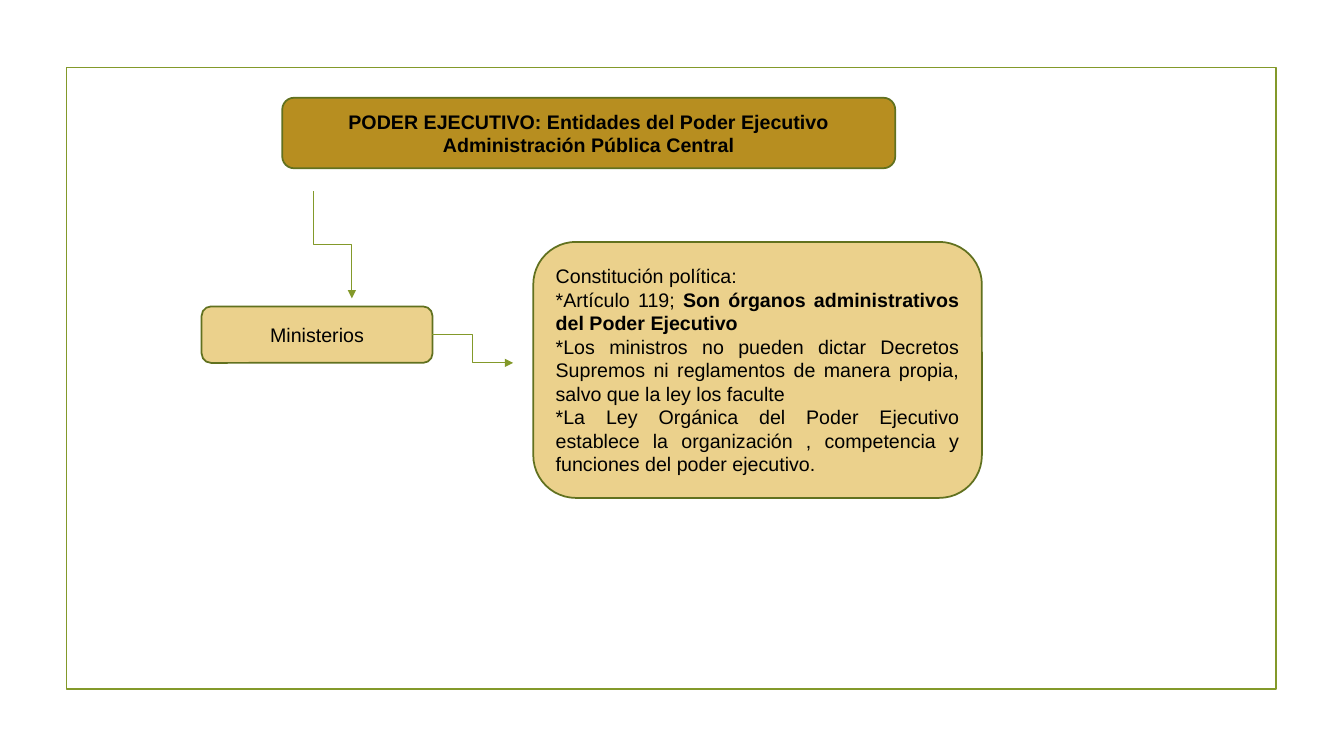
from pptx import Presentation
from pptx.dml.color import RGBColor
from pptx.enum.shapes import MSO_CONNECTOR, MSO_SHAPE
from pptx.enum.text import MSO_ANCHOR, PP_ALIGN
from pptx.oxml.ns import qn
from pptx.util import Inches, Pt
from lxml.etree import SubElement

WIDE, HIGH = 13.33, 7.5
GREEN, EDGE, SAND, GOLD, BLACK = "83992A", "61711F", "EBD18C", "B78E20", "000000"
ROUND, CARD = MSO_SHAPE.ROUNDED_RECTANGLE, MSO_SHAPE.FLOWCHART_ALTERNATE_PROCESS
MID, FULL = PP_ALIGN.CENTER, PP_ALIGN.JUSTIFY

TITLE = [[("PODER EJECUTIVO: Entidades del Poder Ejecutivo Administración Pública Central", True)]]
OFFICE = [[("Ministerios", False)]]
RULES = [
    [("Constitución política:", False)],
    [("*Artículo 119; ", False), ("Son órganos administrativos del Poder Ejecutivo", True)],
    [("*Los ministros no pueden dictar Decretos Supremos ni reglamentos de manera propia, "
      "salvo que la ley los faculte", False)],
    [("*La Ley Orgánica del Poder Ejecutivo establece la organización , competencia y "
      "funciones del poder ejecutivo.", False)],
]

# Places are percentages of the slide's width and height.
BOXES = [
    (MSO_SHAPE.RECTANGLE, (4.95, 8.93, 90.02, 82.27), None, GREEN, MID, []),
    (CARD, (15, 40.53, 17.18, 7.47), SAND, EDGE, MID, OFFICE),
    (CARD, (39.68, 32, 33.38, 33.87), SAND, EDGE, FULL, RULES),
    (ROUND, (21, 12.93, 45.61, 9.33), GOLD, EDGE, MID, TITLE),
]
LINKS = [
    ((32.11, 44.27), (38.18, 48), False),
    ((23.33, 25.33), (26.18, 39.47), True),
]


def color(text):
    return RGBColor.from_string(text)


def across(share):
    return Inches(WIDE * share / 100)


def down(share):
    return Inches(HIGH * share / 100)


def write(frame, lines, align):
    frame.word_wrap = True
    frame.vertical_anchor = MSO_ANCHOR.MIDDLE
    for row, parts in enumerate(lines):
        para = frame.add_paragraph() if row else frame.paragraphs[0]
        para.alignment = align
        for text, bold in parts:
            run = para.add_run()
            run.text = text
            run.font.name, run.font.size, run.font.bold = "Arial", Pt(14), bold
            run.font.color.rgb = color(BLACK)


def add_box(slide, kind, place, fill, line, align, lines):
    left, top, width, height = place
    box = slide.shapes.add_shape(kind, across(left), down(top), across(width), down(height))
    box.shadow.inherit = False
    if fill:
        box.fill.solid()
        box.fill.fore_color.rgb = color(fill)
    else:
        box.fill.background()
    box.line.color.rgb = color(line)
    box.line.width = Pt(1.25)
    if lines:
        write(box.text_frame, lines, align)


def add_link(slide, start, end, turned):
    x1, y1, x2, y2 = across(start[0]), down(start[1]), across(end[0]), down(end[1])
    if turned:
        midx, midy = (x1 + x2) // 2, (y1 + y2) // 2
        halfx, halfy = (y2 - y1) // 2, (x2 - x1) // 2
        x1, y1, x2, y2 = midx + halfx, midy - halfy, midx - halfx, midy + halfy
    link = slide.shapes.add_connector(MSO_CONNECTOR.ELBOW, x1, y1, x2, y2)
    link.line.color.rgb = color(GREEN)
    link.line.width = Pt(0.75)
    props = link._element.spPr
    if turned:
        props.find(qn("a:xfrm")).set("rot", str(270 * 60000))
    SubElement(props.find(qn("a:ln")), qn("a:tailEnd"), type="triangle")
    SubElement(props, qn("a:effectLst"))


def main():
    deck = Presentation()
    deck.slide_width, deck.slide_height = Inches(WIDE), Inches(HIGH)
    slide = deck.slides.add_slide(deck.slide_layouts[6])
    for box in BOXES:
        add_box(slide, *box)
    for link in LINKS:
        add_link(slide, *link)
    deck.save("out.pptx")


if __name__ == "__main__":
    main()
